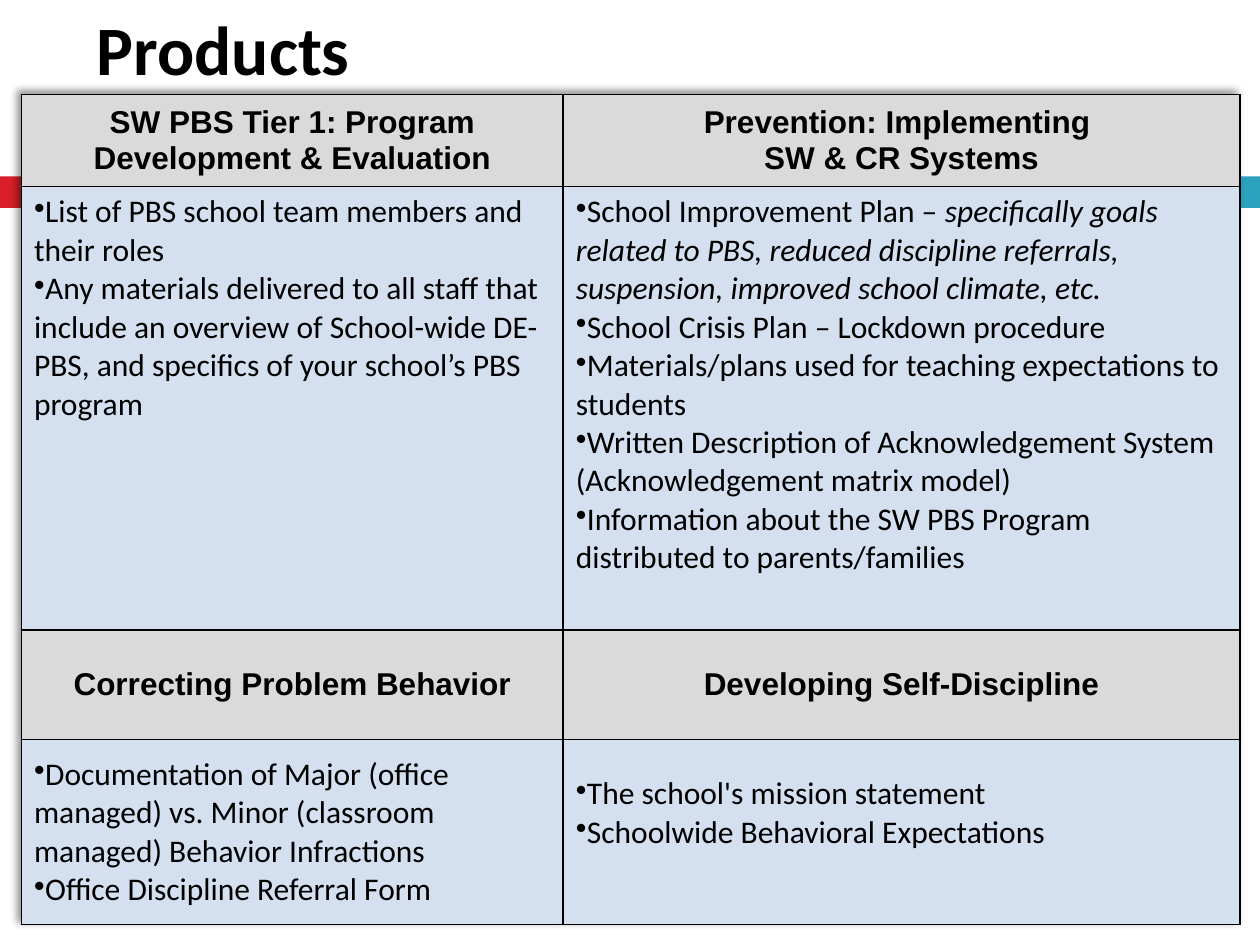
from lxml import etree
from pptx import Presentation
from pptx.dml.color import RGBColor
from pptx.enum.shapes import MSO_SHAPE
from pptx.enum.text import MSO_ANCHOR, PP_ALIGN
from pptx.oxml.ns import qn
from pptx.util import Inches, Pt

RECTANGLE = MSO_SHAPE.RECTANGLE
TOP, MIDDLE = MSO_ANCHOR.TOP, MSO_ANCHOR.MIDDLE
CENTER = PP_ALIGN.CENTER

BLACK, RED, TEAL = "000000", "DA1F28", "2DA2BF"
HEADING_FILL, BODY_FILL = "DADADA", "D4DFEF"

COLUMN_WIDTHS = [4.3, 5.37]
ROW_HEIGHTS = [0.73, 3.52, 0.87, 1.47]

# Each heading cell holds its lines; each body cell holds its bullet items.
# An item is one string, or a (plain, italic) pair.
SECTIONS = [
    {
        "headings": [
            ["SW PBS Tier 1: Program Development & Evaluation"],
            ["Prevention: Implementing ", "SW & CR Systems"],
        ],
        "products": [
            [
                "List of PBS school team members and their roles",
                "Any materials delivered to all staff that include an overview of "
                "School-wide DE-PBS, and specifics of your school’s PBS program",
            ],
            [
                ("School Improvement Plan –",
                 " specifically goals related to PBS, reduced discipline referrals, "
                 "suspension, improved school climate, etc."),
                "School Crisis Plan – Lockdown procedure",
                "Materials/plans used for teaching expectations to students",
                "Written Description of Acknowledgement System "
                "(Acknowledgement matrix model)",
                "Information about the SW PBS Program distributed to parents/families",
            ],
        ],
        "anchor": TOP,
    },
    {
        "headings": [["Correcting Problem Behavior"], ["Developing Self-Discipline"]],
        "products": [
            [
                "Documentation of Major (office managed) vs. Minor (classroom managed) "
                "Behavior Infractions",
                "Office Discipline Referral Form",
            ],
            ["The school's mission statement", "Schoolwide Behavioral Expectations"],
        ],
        "anchor": MIDDLE,
    },
]


def rgb(hex_color):
    return RGBColor.from_string(hex_color)


def add_run(paragraph, text, font, size, bold=False, italic=False):
    run = paragraph.add_run()
    run.text = text
    run.font.name = font
    run.font.size = Pt(size)
    run.font.bold = bold
    run.font.italic = italic
    run.font.color.rgb = rgb(BLACK)


def add_band(slide, left, width, color):
    band = slide.shapes.add_shape(
        RECTANGLE, Inches(left), Inches(1.4), Inches(width), Inches(0.25))
    band.shadow.inherit = False
    band.fill.solid()
    band.fill.fore_color.rgb = rgb(color)
    band.line.fill.background()


def add_title(slide, text):
    title = slide.shapes.add_textbox(
        Inches(0.67), Inches(0.13), Inches(8.92), Inches(0.5))
    frame = title.text_frame
    frame.word_wrap = True
    frame.vertical_anchor = MIDDLE
    add_run(frame.paragraphs[0], text, "Calibri", 39.6, bold=True)


def add_bullet(paragraph):
    properties = paragraph._p.get_or_add_pPr()
    properties.set("marL", "0")
    properties.set("indent", "0")
    etree.SubElement(properties, qn("a:buChar"), char="•")


def add_borders(cell):
    properties = cell._tc.get_or_add_tcPr()
    for position, side in enumerate(("a:lnL", "a:lnR", "a:lnT", "a:lnB")):
        line = etree.Element(qn(side), w=str(Pt(1)))
        fill = etree.SubElement(line, qn("a:solidFill"))
        etree.SubElement(fill, qn("a:srgbClr"), val=BLACK)
        properties.insert(position, line)


def add_table_shadow(table):
    effects = etree.Element(qn("a:effectLst"))
    shadow = etree.SubElement(
        effects, qn("a:outerShdw"), blurRad=str(Pt(4)), dist=str(Pt(3)),
        dir="13500000", algn="br", rotWithShape="0")
    color = etree.SubElement(shadow, qn("a:srgbClr"), val=BLACK)
    etree.SubElement(color, qn("a:alpha"), val="40000")
    table._tbl.tblPr.insert(0, effects)


def style_cell(cell, fill, anchor):
    cell.fill.solid()
    cell.fill.fore_color.rgb = rgb(fill)
    cell.vertical_anchor = anchor
    add_borders(cell)


def cell_paragraphs(cell, count):
    frame = cell.text_frame
    for _ in range(count - 1):
        frame.add_paragraph()
    return frame.paragraphs


def fill_heading(cell, lines):
    style_cell(cell, HEADING_FILL, MIDDLE)
    for paragraph, line in zip(cell_paragraphs(cell, len(lines)), lines):
        paragraph.alignment = CENTER
        add_run(paragraph, line, "Arial", 18, bold=True)


def fill_products(cell, items, anchor):
    style_cell(cell, BODY_FILL, anchor)
    for paragraph, item in zip(cell_paragraphs(cell, len(items)), items):
        add_bullet(paragraph)
        plain, italic = (item, "") if isinstance(item, str) else item
        add_run(paragraph, plain, "Calibri", 18)
        if italic:
            add_run(paragraph, italic, "Calibri", 18, italic=True)


def add_products_table(slide):
    table = slide.shapes.add_table(
        len(ROW_HEIGHTS), len(COLUMN_WIDTHS), Inches(0.17), Inches(0.75),
        Inches(sum(COLUMN_WIDTHS)), Inches(sum(ROW_HEIGHTS))).table
    table.first_row = False
    table.horz_banding = False
    for column, width in zip(table.columns, COLUMN_WIDTHS):
        column.width = Inches(width)
    for row, height in zip(table.rows, ROW_HEIGHTS):
        row.height = Inches(height)

    for index, section in enumerate(SECTIONS):
        for column, lines in enumerate(section["headings"]):
            fill_heading(table.cell(2 * index, column), lines)
        for column, items in enumerate(section["products"]):
            fill_products(table.cell(2 * index + 1, column), items, section["anchor"])

    # The last cell's text sits slightly above the middle
    table.cell(3, 1).margin_bottom = Inches(0.35)
    add_table_shadow(table)


def main():
    presentation = Presentation()
    presentation.slide_width = Inches(10)
    presentation.slide_height = Inches(7.5)
    slide = presentation.slides.add_slide(presentation.slide_layouts[6])

    # Colour bands behind the table
    add_band(slide, 0, 0.58, RED)
    add_band(slide, 0.65, 9.35, TEAL)

    add_title(slide, "Products")
    add_products_table(slide)
    presentation.save("out.pptx")


if __name__ == "__main__":
    main()
